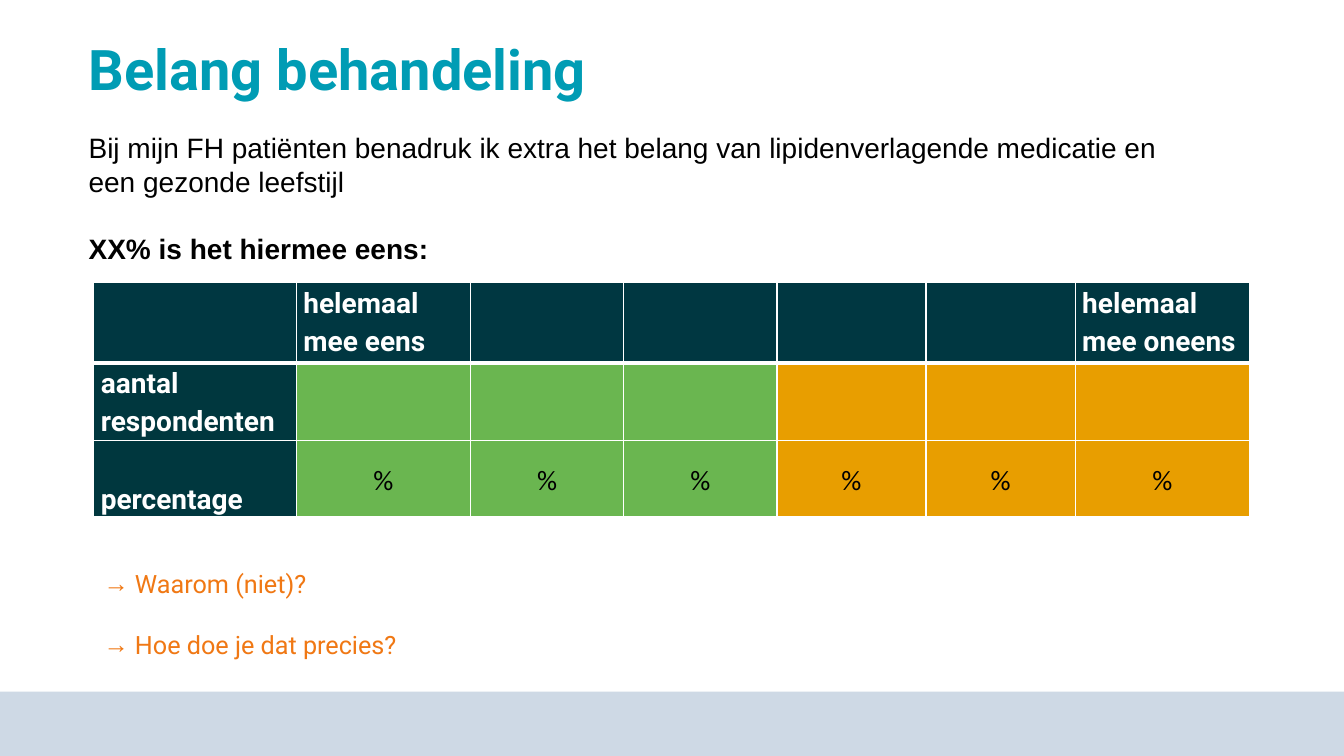
from dataclasses import dataclass

from lxml.etree import SubElement
from pptx import Presentation
from pptx.dml.color import RGBColor
from pptx.enum.shapes import MSO_SHAPE
from pptx.enum.text import MSO_ANCHOR, PP_ALIGN
from pptx.oxml import parse_xml
from pptx.oxml.ns import nsdecls, qn
from pptx.util import Emu, Inches, Pt


@dataclass(frozen=True)
class Theme:
    """Colours, fonts and type sizes of the deck."""

    title: str = "009CB4"
    ink: str = "000000"
    paper: str = "FFFFFF"
    header: str = "003741"
    label: str = "00373E"
    agree: str = "6AB650"
    disagree: str = "E89E00"
    question: str = "F07814"
    band: str = "CED9E5"
    heading_font: str = "Roboto"
    body_font: str = "Arial"
    value_font: str = "Calibri"
    title_size: int = 40
    body_size: int = 20
    question_size: int = 18


THEME = Theme()
WIDTH, HEIGHT = Inches(13.33), Inches(7.5)
COLUMN_WEIGHTS = (201, 173, 152, 152, 148, 148, 173)
ROW_WEIGHTS = (80, 76, 76)
ROWS = (
    ("", "helemaal mee eens", "", "", "", "", "helemaal mee oneens"),
    ("aantal\nrespondenten", "", "", "", "", "", ""),
    ("percentage", "%", "%", "%", "%", "%", "%"),
)


def area(left, top, width, height):
    """Turn percentages of the slide into a box."""
    return (Emu(int(WIDTH * left / 100)), Emu(int(HEIGHT * top / 100)),
            Emu(int(WIDTH * width / 100)), Emu(int(HEIGHT * height / 100)))


def apply(target, values):
    """Set every attribute named in values on target."""
    for name, value in values.items():
        setattr(target, name, value)


def write(para, text, font, size, colour, bold=False, **layout):
    """Fill one paragraph with a formatted span."""
    apply(para, layout)
    span = para.add_run()
    span.text = text
    apply(span.font, {"name": font, "size": Pt(size), "bold": bold})
    span.font.color.rgb = RGBColor.from_string(colour)


def paragraphs(frame, count):
    """Return count paragraphs of a text frame, starting with its own."""
    return [frame.paragraphs[0]] + [frame.add_paragraph() for _ in range(count - 1)]


def add_band(page, box):
    """Draw the footer band."""
    band = page.shapes.add_shape(MSO_SHAPE.RECTANGLE, *box)
    band.shadow.inherit = False
    band.fill.solid()
    band.fill.fore_color.rgb = RGBColor.from_string(THEME.band)
    band.line.fill.background()


def add_title(page, box, text):
    """Place and format the title placeholder."""
    title = page.shapes.title
    apply(title, dict(zip(("left", "top", "width", "height"), box)))
    apply(title.text_frame, {"word_wrap": True, "vertical_anchor": MSO_ANCHOR.MIDDLE})
    write(title.text_frame.paragraphs[0], text, THEME.heading_font, THEME.title_size,
          THEME.title, True, alignment=PP_ALIGN.LEFT, line_spacing=0.9)


def add_statement(page, box, statement, result):
    """Write the statement and the bold result below it."""
    frame = page.shapes.add_textbox(*box).text_frame
    frame.word_wrap = True
    first, second = paragraphs(frame, 2)
    style = (THEME.body_font, THEME.body_size, THEME.ink)
    write(first, statement, *style, line_spacing=Pt(24))
    write(second, result, *style, True, line_spacing=Pt(24), space_before=Pt(24))


def add_questions(page, box, questions):
    """List the questions with arrow bullets."""
    frame = page.shapes.add_textbox(*box).text_frame
    frame.word_wrap = True
    indent = Inches(0.31)
    for index, para in enumerate(paragraphs(frame, len(questions))):
        if index:
            para.space_before = Pt(22)
        properties = para._p.get_or_add_pPr()
        properties.set("marL", str(indent))
        properties.set("indent", str(-indent))
        SubElement(properties, qn("a:buFont"), typeface=THEME.body_font)
        SubElement(properties, qn("a:buChar"), char="→")
        write(para, questions[index], THEME.heading_font, THEME.question_size, THEME.question)


def set_borders(cell, bottom):
    """Give a cell white borders, with its own bottom width in points."""
    widths = {"L": 1, "R": 1, "T": 1, "B": bottom}
    for index, (side, width) in enumerate(widths.items()):
        cell._tc.get_or_add_tcPr().insert(index, parse_xml(
            f'<a:ln{side} {nsdecls("a")} w="{Pt(width)}"><a:solidFill>'
            f'<a:srgbClr val="{THEME.paper}"/></a:solidFill></a:ln{side}>'))


def cell_colour(row, column):
    """Choose a fill by the role of the cell."""
    if row == 0:
        return THEME.header
    if column == 0:
        return THEME.label
    return THEME.agree if column <= 3 else THEME.disagree


def fill_cell(cell, row, column, text):
    """Write and format one cell of the answer table."""
    is_value = row > 0 and column > 0
    is_last_label = row == 2 and column == 0
    anchor = MSO_ANCHOR.MIDDLE if is_value else MSO_ANCHOR.TOP
    apply(cell, {"margin_left": Inches(0.07), "margin_right": Inches(0.07),
                 "margin_top": 0, "margin_bottom": 0,
                 "vertical_anchor": MSO_ANCHOR.BOTTOM if is_last_label else anchor})
    cell.fill.solid()
    cell.fill.fore_color.rgb = RGBColor.from_string(cell_colour(row, column))
    set_borders(cell, 3 if row == 0 else 1)
    if not text:
        return
    lines = text.split("\n")
    font, colour = ((THEME.value_font, THEME.ink) if is_value
                    else (THEME.heading_font, THEME.paper))
    for para, line in zip(paragraphs(cell.text_frame, len(lines)), lines):
        write(para, line, font, THEME.body_size, colour, not is_value, line_spacing=1.15,
              alignment=PP_ALIGN.CENTER if is_value else PP_ALIGN.LEFT)


def add_answers(page, box, rows):
    """Build the table of answers, sized by column and row weights."""
    table = page.shapes.add_table(len(rows), len(rows[0]), *box).table
    apply(table, {"first_row": False, "horz_banding": False})
    for column, weight in zip(table.columns, COLUMN_WEIGHTS):
        column.width = Emu(int(box[2] * weight / sum(COLUMN_WEIGHTS)))
    for row, weight in zip(table.rows, ROW_WEIGHTS):
        row.height = Emu(int(box[3] * weight / sum(ROW_WEIGHTS)))
    for row, texts in enumerate(rows):
        for column, text in enumerate(texts):
            fill_cell(table.cell(row, column), row, column, text)


def main():
    """Build and save the deck."""
    deck = Presentation()
    apply(deck, {"slide_width": WIDTH, "slide_height": HEIGHT})
    page = deck.slides.add_slide(deck.slide_layouts[5])
    add_band(page, area(0, 91.47, 100, 8.53))
    add_title(page, area(5.85, 4.8, 80.1, 9.47), "Belang behandeling")
    add_questions(page, area(6.98, 74.53, 82.67, 13.47),
                  ("Waarom (niet)?", "Hoe doe je dat precies?"))
    add_answers(page, area(6.98, 37.33, 86, 30.93), ROWS)
    add_statement(page, area(5.85, 16.67, 82.15, 23.33),
                  "Bij mijn FH patiënten benadruk ik extra het belang van "
                  "lipidenverlagende medicatie en een gezonde leefstijl",
                  "XX% is het hiermee eens:")
    deck.save("out.pptx")


if __name__ == "__main__":
    main()
